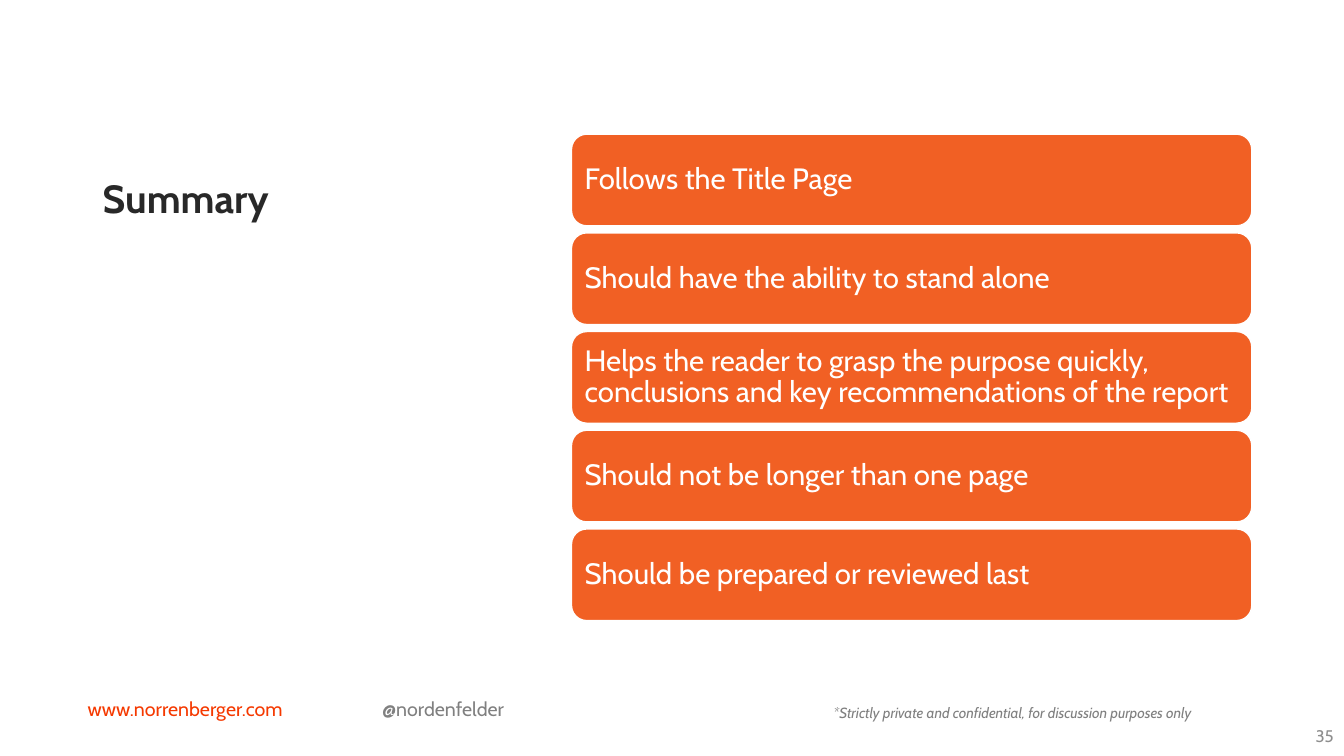
from pptx import Presentation
from pptx import util as u
from pptx.dml.color import RGBColor
from pptx.enum import shapes, text

ORANGE = RGBColor(0xF1, 0x60, 0x24)
LINK_RED = RGBColor(0xF5, 0x39, 0x00)
INK = RGBColor(0x28, 0x28, 0x28)
GREY = RGBColor(0x80, 0x80, 0x80)
NOTE_GREY = RGBColor(0x7F, 0x7F, 0x7F)
NUMBER_GREY = RGBColor(0x8E, 0x8E, 0x8E)
WHITE = RGBColor(0xFF, 0xFF, 0xFF)

POINTS = [
    "Follows the Title Page",
    "Should have the ability to stand alone",
    "Helps the reader to grasp the purpose quickly, conclusions and key recommendations of the report",
    "Should not be longer than one page",
    "Should be prepared or reviewed last",
]
CARD_TOP, CARD_PITCH = 95.8, 70.5


def write(box, words, size, color, bold=False, italic=False, spacing=1.0,
          align=text.PP_ALIGN.LEFT, anchor=text.MSO_ANCHOR.TOP, insets=(3.6, 3.6)):
    """Fill a shape with one formatted paragraph."""
    frame = box.text_frame
    frame.word_wrap = True
    frame.auto_size = text.MSO_AUTO_SIZE.NONE
    frame.vertical_anchor = anchor
    frame.margin_left = frame.margin_right = u.Pt(insets[0])
    frame.margin_top = frame.margin_bottom = u.Pt(insets[1])
    para = frame.paragraphs[0]
    para.alignment = align
    para.line_spacing = spacing
    span = para.add_run()
    span.text = words
    span.font.name = "Cabin"
    span.font.size = u.Pt(size)
    span.font.bold = bold
    span.font.italic = italic
    span.font.color.rgb = color


class SummaryPage:
    """Hold the current slide and draw its styled elements."""

    def __init__(self, deck):
        self.page = deck.slides.add_slide(deck.slide_layouts[5])

    def title(self, words, left, top, width, height):
        """Place and format the title placeholder."""
        box = self.page.shapes.title
        box.left, box.top = u.Pt(left), u.Pt(top)
        box.width, box.height = u.Pt(width), u.Pt(height)
        write(box, words, 28, INK, bold=True, spacing=0.9,
              anchor=text.MSO_ANCHOR.BOTTOM, insets=(7.2, 3.6))

    def label(self, words, left, top, width, height, size, color, **style):
        """Add a plain text box."""
        box = self.page.shapes.add_textbox(u.Pt(left), u.Pt(top), u.Pt(width), u.Pt(height))
        write(box, words, size, color, **style)

    def card(self, words, top):
        """Add a rounded orange card with its text."""
        box = self.page.shapes.add_shape(
            shapes.MSO_SHAPE.ROUNDED_RECTANGLE, u.Pt(408.2), u.Pt(top), u.Pt(486), u.Pt(65.5))
        box.shadow.inherit = False
        box.fill.solid()
        box.fill.fore_color.rgb = ORANGE
        box.line.color.rgb = WHITE
        box.line.width = u.Pt(1)
        write(box, words, 21, WHITE, spacing=0.9,
              anchor=text.MSO_ANCHOR.MIDDLE, insets=(6.3, 6.3))


def main():
    """Build and save the deck."""
    deck = Presentation()
    deck.slide_width, deck.slide_height = u.Pt(960), u.Pt(540)
    summary = SummaryPage(deck)
    summary.label("www.norrenberger.com", 59, 494.6, 159, 24.5, 14, LINK_RED)
    summary.label("@nordenfelder", 269.3, 494.6, 99.4, 24.5, 14, GREY)
    summary.label("*Strictly private and confidential, for discussion purposes only",
                  591.8, 499, 273.6, 24.5, 10.5, NOTE_GREY, italic=True)
    summary.title("Summary", 66.2, 77.8, 309.6, 84.2)
    summary.label("35", 925.2, 511.2, 34.6, 28.8, 12, NUMBER_GREY,
                  align=text.PP_ALIGN.RIGHT, anchor=text.MSO_ANCHOR.MIDDLE, insets=(7.2, 3.6))
    for row, words in enumerate(POINTS):
        summary.card(words, CARD_TOP + row * CARD_PITCH)
    deck.save("out.pptx")


if __name__ == "__main__":
    main()
